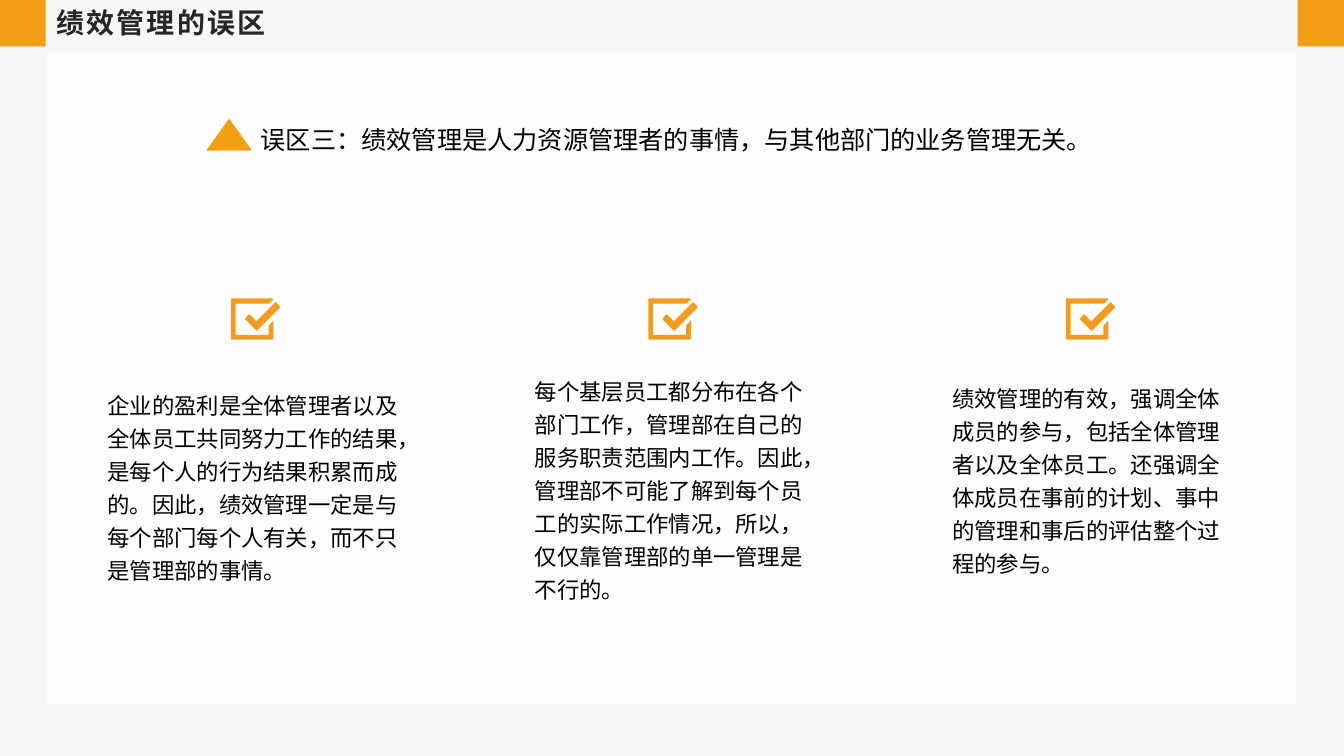
from lxml.etree import SubElement
from pptx import Presentation
from pptx.dml.color import RGBColor
from pptx.enum.lang import MSO_LANGUAGE_ID as Language
from pptx.enum.shapes import MSO_SHAPE as Preset
from pptx.enum.text import MSO_ANCHOR as Anchor, MSO_AUTO_SIZE as AutoSize, PP_ALIGN as Align
from pptx.oxml.ns import qn
from pptx.util import Cm, Pt

ORANGE = "F29E17"
CHECK_ORANGE = "F19C1F"
TRIANGLE_ORANGE = "F1A012"

# Outlines of the check box, in hundredths of a centimetre
TICK = [(114, 10), (124, 21), (124, 23), (66, 81), (64, 81), (36, 53),
        (36, 51), (44, 41), (48, 41), (64, 58), (112, 10)]
FRAME = [(2, 0), (105, 0), (107, 2), (97, 13), (12, 13), (12, 92), (95, 92),
         (95, 69), (107, 56), (107, 102), (105, 104), (2, 104), (0, 102), (0, 2)]

# Left, top, width, height and text of each column
REASONS = [
    (2.46, 9.6, 7.92, 5.31,
     "企业的盈利是全体管理者以及全体员工共同努力工作的结果，是每个人的行为结果积累而成的。"
     "因此，绩效管理一定是与每个部门每个人有关，而不只是管理部的事情。"),
    (13.23, 9.25, 7.39, 6.15,
     "每个基层员工都分布在各个部门工作，管理部在自己的服务职责范围内工作。"
     "因此，管理部不可能了解到每个员工的实际工作情况，所以，仅仅靠管理部的单一管理是不行的。"),
    (23.75, 9.42, 7.39, 5.31,
     "绩效管理的有效，强调全体成员的参与，包括全体管理者以及全体员工。"
     "还强调全体成员在事前的计划、事中的管理和事后的评估整个过程的参与。"),
]


def color(hex_text):
    return RGBColor.from_string(hex_text)


class SlideBuilder:
    font_name = "Noto Sans CJK SC"

    def __init__(self, presentation, background):
        self.slide = presentation.slides.add_slide(presentation.slide_layouts[5])
        fill = self.slide.background.fill
        fill.solid()
        fill.fore_color.rgb = color(background)

    def place(self, shape, left, top, width, height):
        shape.left, shape.top = Cm(left), Cm(top)
        shape.width, shape.height = Cm(width), Cm(height)

    def set_text(self, shape, text, size=16, ink="000000", bold=False,
                 line_spacing=None, tracking=None, anchor=Anchor.TOP):
        frame = shape.text_frame
        frame.word_wrap = True
        frame.auto_size = AutoSize.SHAPE_TO_FIT_TEXT
        frame.vertical_anchor = anchor
        paragraph = frame.paragraphs[0]
        paragraph.alignment = Align.LEFT
        if line_spacing:
            paragraph.line_spacing = Pt(line_spacing)
        run = paragraph.add_run()
        run.text = text
        font = run.font
        font.size, font.bold, font.name = Pt(size), bold, self.font_name
        font.language_id = Language.SIMPLIFIED_CHINESE
        font.color.rgb = color(ink)
        properties = run._r.get_or_add_rPr()
        SubElement(properties, qn("a:ea")).set("typeface", self.font_name)
        if tracking:
            properties.set("spc", str(int(tracking * 100)))

    def title(self, text, *box, **style):
        shape = self.slide.shapes.title
        self.place(shape, *box)
        self.set_text(shape, text, **style)

    def text(self, text, *box, **style):
        shape = self.slide.shapes.add_textbox(*map(Cm, box))
        self.set_text(shape, text, **style)

    def paint(self, shape, fill, line=None, opacity=None):
        shape.shadow.inherit = False
        shape.fill.solid()
        shape.fill.fore_color.rgb = color(fill)
        if line:
            shape.line.color.rgb = color(line)
            shape.line.width = Pt(1)
        else:
            shape.line.fill.background()
        if opacity:
            hue = shape._element.spPr.find(qn("a:solidFill"))[0]
            SubElement(hue, qn("a:alpha")).set("val", str(opacity * 1000))

    def shape(self, preset, *box, **style):
        self.paint(self.slide.shapes.add_shape(preset, *map(Cm, box)), **style)

    def check_box(self, left, top):
        builder = self.slide.shapes.build_freeform(*TICK[0], scale=Cm(0.01))
        builder.add_line_segments(TICK[1:])
        builder.move_to(*FRAME[0])
        builder.add_line_segments(FRAME[1:])
        self.paint(builder.convert_to_shape(Cm(left), Cm(top)), CHECK_ORANGE)


def main():
    presentation = Presentation()
    presentation.slide_width, presentation.slide_height = Cm(33.87), Cm(19.05)
    builder = SlideBuilder(presentation, "F6F8F7")

    builder.shape(Preset.RECTANGLE, 1.19, 1.32, 31.47, 16.43, fill="FFFFFF", opacity=81)
    for left in (-0.02, 32.7):
        builder.shape(Preset.RECTANGLE, left, 0, 1.17, 1.17, fill=ORANGE)
    builder.title("绩效管理的误区", 1.17, 0, 7.04, 1.12, size=20, ink="262626",
                  bold=True, tracking=1.5, anchor=Anchor.MIDDLE)

    builder.shape(Preset.ISOSCELES_TRIANGLE, 5.23, 3.02, 1.09, 0.76,
                  fill=TRIANGLE_ORANGE, line=TRIANGLE_ORANGE)
    builder.text("误区三：绩效管理是人力资源管理者的事情，与其他部门的业务管理无关。",
                 6.32, 3.02, 21.77, 1.02, size=18)

    for column, (left, top, width, height, reason) in enumerate(REASONS):
        builder.check_box(5.82 + 10.52 * column, 7.52)
        builder.text(reason, left, top, width, height, line_spacing=23.6)

    presentation.save("out.pptx")


if __name__ == "__main__":
    main()
